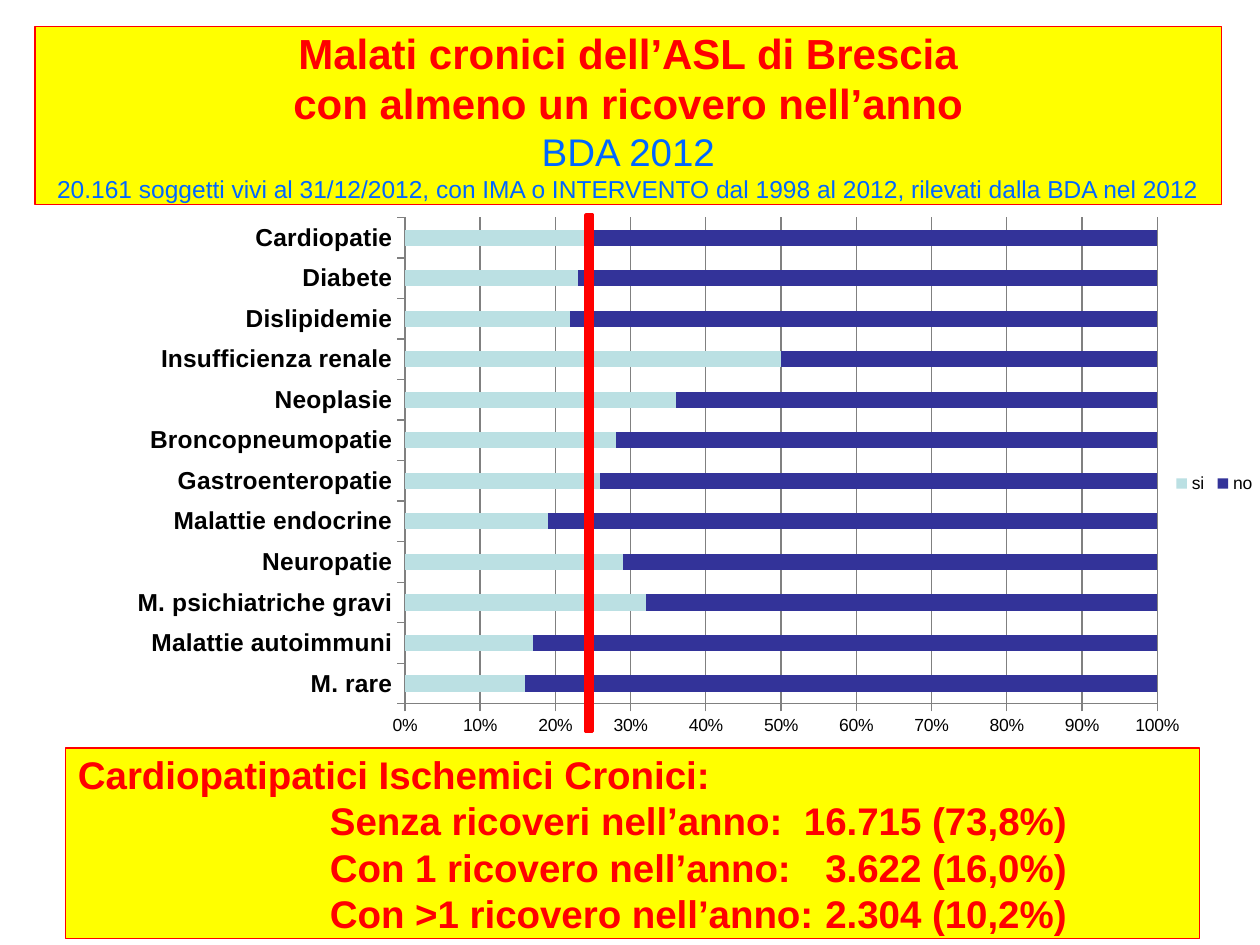
import pptx
import pptx.chart.data
import pptx.dml.color
import pptx.enum.chart
import pptx.enum.shapes
import pptx.enum.text
import pptx.oxml
import pptx.oxml.ns
import pptx.util

Pt = pptx.util.Pt
RED, YELLOW, BLUE, GREY = "FF0000", "FFFF00", "0066FF", "808080"
ADMISSIONS = {
    "M. rare": 16,
    "Malattie autoimmuni": 17,
    "M. psichiatriche gravi": 32,
    "Neuropatie": 29,
    "Malattie endocrine": 19,
    "Gastroenteropatie": 26,
    "Broncopneumopatie": 28,
    "Neoplasie": 36,
    "Insufficienza renale": 50,
    "Dislipidemie": 22,
    "Diabete": 23,
    "Cardiopatie": 25,
}


def color(hex_code):
    return pptx.dml.color.RGBColor.from_string(hex_code)


class SlideBuilder:
    """Holds the style and the current slide, and adds each kind of element."""

    font = "Arial"

    def __init__(self, slide):
        self.slide = slide

    def rectangle(self, left, top, width, height, fill, line_width):
        rect = self.slide.shapes.add_shape(
            pptx.enum.shapes.MSO_SHAPE.RECTANGLE,
            Pt(left), Pt(top), Pt(width), Pt(height))
        rect.shadow.inherit = False
        rect.fill.solid()
        rect.fill.fore_color.rgb = color(fill)
        rect.line.color.rgb = color(RED)
        rect.line.width = Pt(line_width)
        return rect

    def text_panel(self, left, top, width, height, lines, align, tabs=()):
        frame = self.rectangle(left, top, width, height, YELLOW, 0.75).text_frame
        frame.word_wrap = True
        frame.vertical_anchor = pptx.enum.text.MSO_ANCHOR.MIDDLE
        for index, (text, size, ink, bold) in enumerate(lines):
            paragraph = frame.add_paragraph() if index else frame.paragraphs[0]
            paragraph.text = text
            paragraph.alignment = align
            if tabs:
                self.tab_stops(paragraph, tabs)
            paragraph.font.name = self.font
            paragraph.font.size = Pt(size)
            paragraph.font.bold = bold
            paragraph.font.color.rgb = color(ink)

    def tab_stops(self, paragraph, tabs):
        stops = "".join(f'<a:tab pos="{Pt(pos)}" algn="{side}"/>' for pos, side in tabs)
        paragraph._p.get_or_add_pPr().append(pptx.oxml.parse_xml(
            f'<a:tabLst {pptx.oxml.ns.nsdecls("a")}>{stops}</a:tabLst>'))

    def layout(self, x, y, w, h, target=""):
        return pptx.oxml.parse_xml(
            f'<c:layout {pptx.oxml.ns.nsdecls("c")}><c:manualLayout>{target}'
            '<c:xMode val="edge"/><c:yMode val="edge"/>'
            f'<c:x val="{x}"/><c:y val="{y}"/><c:w val="{w}"/><c:h val="{h}"/>'
            '</c:manualLayout></c:layout>')

    def stacked_bars(self, left, top, width, height, categories, series, fills):
        data = pptx.chart.data.CategoryChartData()
        data.categories = categories
        for name, values in series.items():
            data.add_series(name, values)
        chart = self.slide.shapes.add_chart(
            pptx.enum.chart.XL_CHART_TYPE.BAR_STACKED_100,
            Pt(left), Pt(top), Pt(width), Pt(height), data).chart
        chart.has_title = False
        chart.font.name = self.font
        chart.font.size = Pt(10)
        chart.font.color.rgb = color("000000")

        plot = chart.plots[0]
        plot.gap_width = 150
        plot.overlap = 100
        plot.vary_by_categories = False
        for bars, fill in zip(plot.series, fills):
            bars.format.fill.solid()
            bars.format.fill.fore_color.rgb = color(fill)

        diseases, share = chart.category_axis, chart.value_axis
        diseases.tick_labels.font.size = Pt(14)
        diseases.tick_labels.font.bold = True
        share.minimum_scale, share.maximum_scale, share.major_unit = 0, 1, 0.1
        share.tick_labels.number_format = "0%"
        share.tick_labels.number_format_is_linked = False
        share.has_major_gridlines = True
        share.major_gridlines.format.line.color.rgb = color(GREY)
        for axis in (diseases, share):
            axis.major_tick_mark = pptx.enum.chart.XL_TICK_MARK.OUTSIDE
            axis.format.line.color.rgb = color(GREY)

        chart.has_legend = True
        chart.legend.position = pptx.enum.chart.XL_LEGEND_POSITION.RIGHT
        chart.legend.include_in_layout = False
        legend = chart.legend._element
        for old in legend.findall(pptx.oxml.ns.qn("c:layout")):
            legend.remove(old)
        legend.find(pptx.oxml.ns.qn("c:legendPos")).addnext(
            self.layout(0.92, 0.47, 0.08, 0.05))
        area = chart._chartSpace.chart.plotArea
        for old in area.findall(pptx.oxml.ns.qn("c:layout")):
            area.remove(old)
        area.insert(0, self.layout(
            0.25, 0.03, 0.66, 0.85, '<c:layoutTarget val="inner"/>'))


def main():
    deck = pptx.Presentation()
    deck.slide_width, deck.slide_height = Pt(720), Pt(540)
    builder = SlideBuilder(deck.slides.add_slide(deck.slide_layouts[6]))
    align = pptx.enum.text.PP_ALIGN

    builder.text_panel(20, 15, 678, 102, [
        ("Malati cronici dell’ASL di Brescia", 24, RED, True),
        ("con almeno un ricovero nell’anno", 24, RED, True),
        ("BDA 2012", 22, BLUE, False),
        ("20.161 soggetti vivi al 31/12/2012, con IMA o INTERVENTO "
         "dal 1998 al 2012, rilevati dalla BDA nel 2012", 14, BLUE, False),
    ], align.CENTER)

    admitted = list(ADMISSIONS.values())
    builder.stacked_bars(
        68.5, 114.5, 651.5, 327, list(ADMISSIONS),
        {"si": admitted, "no": [100 - share for share in admitted]},
        ["BBE0E3", "333399"])
    builder.rectangle(335, 123, 3.6, 295, RED, 2)

    summary = [
        "Cardiopatipatici Ischemici Cronici:",
        "\tSenza ricoveri nell’anno:\t16.715 (73,8%)",
        "\tCon 1 ricovero nell’anno:\t3.622 (16,0%)",
        "\tCon >1 ricovero nell’anno:\t2.304 (10,2%)",
    ]
    builder.text_panel(
        37.5, 427.5, 648, 109, [(line, 22, RED, True) for line in summary],
        align.LEFT, [(144, "l"), (565, "r")])

    deck.save("out.pptx")


if __name__ == "__main__":
    main()
